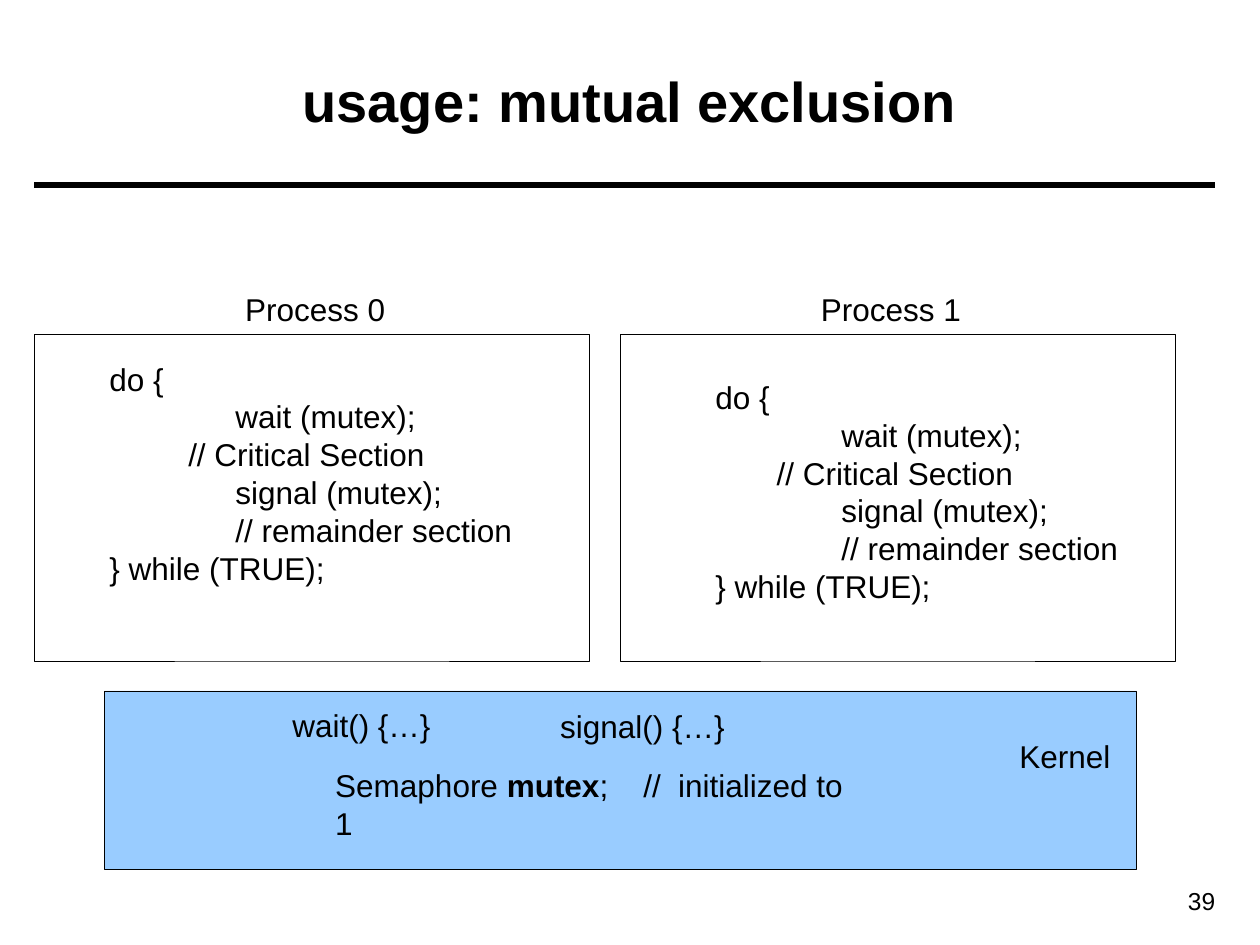
import pptx
import pptx.dml.color
import pptx.enum.shapes
import pptx.enum.text
import pptx.oxml.ns
import pptx.util
import lxml.etree

Pt = pptx.util.Pt
ALIGN = pptx.enum.text.PP_ALIGN
ANCHOR = pptx.enum.text.MSO_ANCHOR
BLACK = "000000"
KERNEL_FILL = "99CCFF"

# heading, heading left, code left, code top, comment indent
PROCESSES = [
    ("Process 0", 133, 19.5, 202, 81),
    ("Process 1", 462, 365.75, 212.5, 71),
]
FRAME_LEFT, FRAME_TOP, FRAME_W, FRAME_H, FRAME_PITCH = 19.5, 190.75, 317.5, 187, 334.75
OUTER, INNER = 36, 108


def code_lines(comment_indent):
    """Lines of the process loop, each with its left indent."""
    return [
        ("do {", OUTER),
        ("wait (mutex);", INNER),
        ("// Critical Section", comment_indent),
        ("signal (mutex);", INNER),
        ("// remainder section", INNER),
        ("} while (TRUE);", OUTER),
    ]


# text, left, top, width
KERNEL_LABELS = [
    ("wait() {…}", 160, 400, 100),
    ("signal() {…}", 313, 400.5, 116),
    ("Kernel", 575.5, 417.5, 72),
]
SEMAPHORE = [("Semaphore ", False), ("mutex", True), (";    //  initialized to 1", False)]


def color(hex_value):
    return pptx.dml.color.RGBColor.from_string(hex_value)


def style_run(r, size, bold):
    r.font.name = "Arial"
    r.font.size = Pt(size)
    r.font.bold = bold
    r.font.color.rgb = color(BLACK)


def add_text(s, lines, left, top, width, height, size=18, bold=False,
             align=ALIGN.LEFT, anchor=ANCHOR.TOP):
    """Add a text box; lines are (text, left indent) pairs."""
    tf = s.shapes.add_textbox(Pt(left), Pt(top), Pt(width), Pt(height)).text_frame
    tf.word_wrap = True
    tf.vertical_anchor = anchor
    for i, (text, indent) in enumerate(lines):
        p = tf.add_paragraph() if i else tf.paragraphs[0]
        p.text = text
        p.alignment = align
        if indent:
            p._p.get_or_add_pPr().set("marL", str(Pt(indent)))
        for r in p.runs:
            style_run(r, size, bold)
    return tf


def add_box(s, left, top, width, height, fill=None):
    sp = s.shapes.add_shape(pptx.enum.shapes.MSO_SHAPE.RECTANGLE,
                            Pt(left), Pt(top), Pt(width), Pt(height))
    sp.shadow.inherit = False
    if fill:
        sp.fill.solid()
        sp.fill.fore_color.rgb = color(fill)
    else:
        sp.fill.background()
    sp.line.color.rgb = color(BLACK)
    sp.line.width = Pt(0.25)


def add_rule(s, x1, x2, y):
    line = s.shapes.add_connector(pptx.enum.shapes.MSO_CONNECTOR.STRAIGHT,
                                  Pt(x1), Pt(y), Pt(x2), Pt(y))
    line.line.color.rgb = color(BLACK)
    line.line.width = Pt(3)
    lxml.etree.SubElement(line._element.spPr, pptx.oxml.ns.qn("a:effectLst"))


def main():
    prs = pptx.Presentation()
    prs.slide_width, prs.slide_height = Pt(720), Pt(540)
    s = prs.slides.add_slide(prs.slide_layouts[6])

    add_rule(s, 19.5, 694.5, 105.75)
    add_text(s, [("39", 0)], 626.5, 502.5, 75, 24.5, size=14, align=ALIGN.RIGHT)
    add_box(s, 59.75, 394.75, 589.75, 102, KERNEL_FILL)
    add_text(s, [("usage: mutual exclusion", 0)], 25.25, 12.25, 669, 90, size=32,
             bold=True, align=ALIGN.CENTER, anchor=ANCHOR.MIDDLE)

    for i, (heading, heading_left, left, top, comment_indent) in enumerate(PROCESSES):
        add_text(s, code_lines(comment_indent), left, top, 329, 137)
        add_box(s, FRAME_LEFT + i * FRAME_PITCH, FRAME_TOP, FRAME_W, FRAME_H)
        add_text(s, [(heading, 0)], heading_left, 162, 100, 29)

    for text, left, top, width in KERNEL_LABELS:
        add_text(s, [(text, 0)], left, top, width, 29)
    p = add_text(s, [("", 0)], 184.5, 434.25, 319, 50).paragraphs[0]
    for text, bold in SEMAPHORE:
        r = p.add_run()
        r.text = text
        style_run(r, 18, bold)

    prs.save("out.pptx")


if __name__ == "__main__":
    main()
